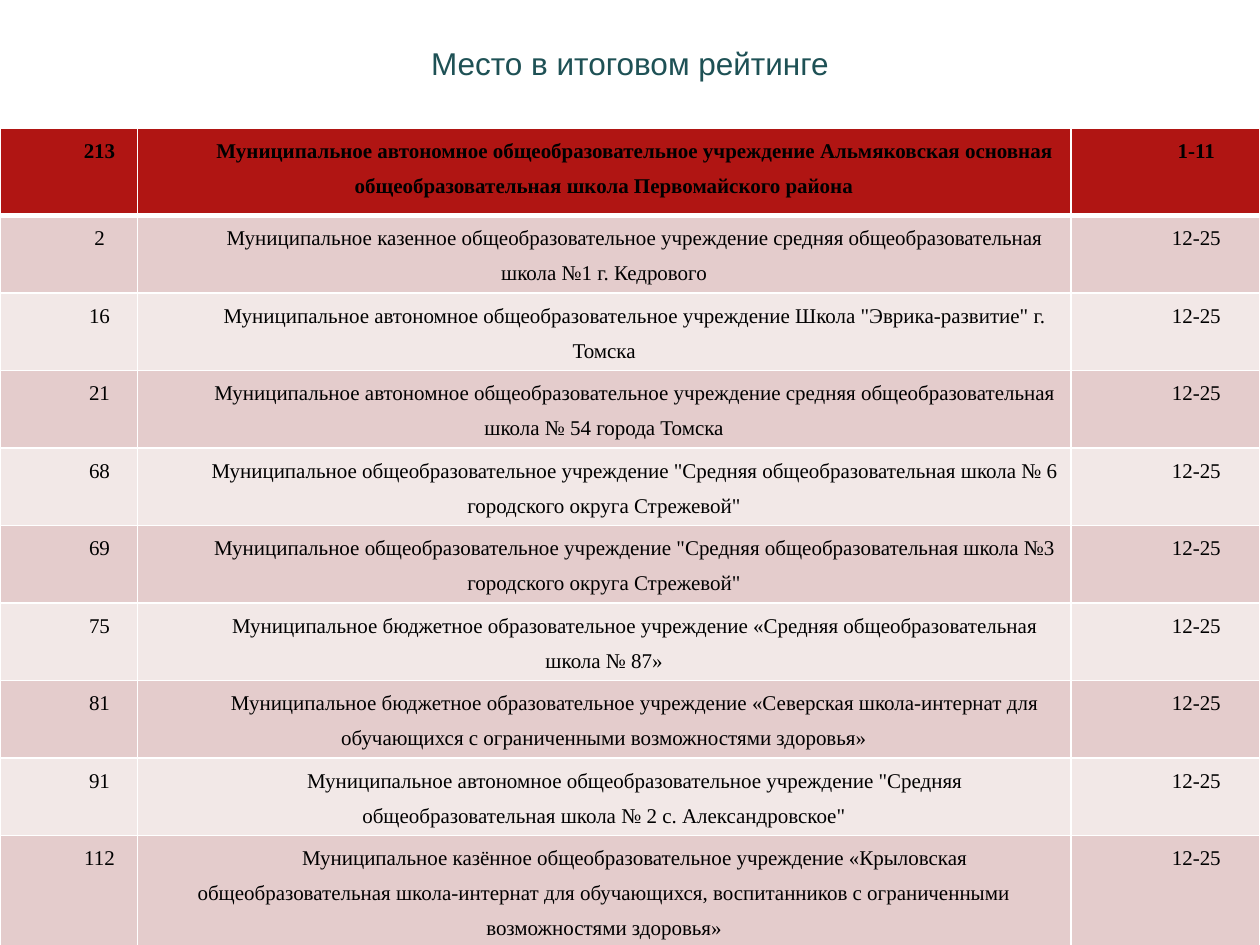
from lxml.etree import SubElement
from pptx import Presentation
from pptx.dml.color import RGBColor
from pptx.enum.text import MSO_ANCHOR, PP_ALIGN
from pptx.oxml.ns import qn
from pptx.util import Inches, Pt

HEAD, DARK, PALE = "B01513", "E4CCCC", "F2E8E7"
WIDTHS = [1.09, 7.41, 1.5]
HEAD_H, LAST_H, FULL_H = 0.69, 1.03, 6.64
ROWS = [
    ("213", "Муниципальное автономное общеобразовательное учреждение Альмяковская основная общеобразовательная школа Первомайского района", "1-11"),
    ("2", "Муниципальное казенное общеобразовательное учреждение средняя общеобразовательная школа №1 г. Кедрового", "12-25"),
    ("16", 'Муниципальное автономное общеобразовательное учреждение Школа "Эврика-развитие" г. Томска', "12-25"),
    ("21", "Муниципальное автономное общеобразовательное учреждение средняя общеобразовательная школа № 54 города Томска", "12-25"),
    ("68", 'Муниципальное общеобразовательное учреждение "Средняя общеобразовательная школа № 6 городского округа Стрежевой"', "12-25"),
    ("69", 'Муниципальное общеобразовательное учреждение "Средняя общеобразовательная школа №3 городского округа Стрежевой"', "12-25"),
    ("75", "Муниципальное бюджетное образовательное учреждение «Средняя общеобразовательная школа № 87»", "12-25"),
    ("81", "Муниципальное бюджетное образовательное учреждение «Северская школа-интернат для обучающихся с ограниченными возможностями здоровья»", "12-25"),
    ("91", 'Муниципальное автономное общеобразовательное учреждение "Средняя общеобразовательная школа № 2 с. Александровское"', "12-25"),
    ("112", "Муниципальное казённое общеобразовательное учреждение «Крыловская общеобразовательная школа-интернат для обучающихся, воспитанников c ограниченными возможностями здоровья»", "12-25"),
]


def color(code):
    return RGBColor.from_string(code)


def write(frame, text, font="Times New Roman", size=12, ink="000000",
          bold=False, indent=0, spacing=1):
    frame.word_wrap = True
    para = frame.paragraphs[0]
    para.alignment = PP_ALIGN.CENTER
    para.line_spacing = spacing
    if indent:
        props = para._p.get_or_add_pPr()
        props.set("marL", "0")
        props.set("indent", str(Inches(indent)))
    run = para.add_run()
    run.text = text
    run.font.name = font
    run.font.size = Pt(size)
    run.font.bold = bold
    run.font.color.rgb = color(ink)


def add_title(slide, text):
    box = slide.shapes.add_textbox(Inches(0.5), Inches(0.3), Inches(9), Inches(1.25))
    box.text_frame.vertical_anchor = MSO_ANCHOR.TOP
    write(box.text_frame, text, font="Arial", size=18, ink="1E5155")


def add_edges(cell, **points):
    """Draw white borders; keys are the border tags, values their widths."""
    props = cell._tc.get_or_add_tcPr()
    for tag, width in points.items():
        line = SubElement(props, qn(f"a:{tag}"), w=str(Pt(width)))
        fill = SubElement(line, qn("a:solidFill"))
        SubElement(fill, qn("a:srgbClr"), val="FFFFFF")


def fill_cell(cell, text, row):
    head = row == 0
    cell.margin_left = cell.margin_right = Inches(0.07)
    cell.margin_top = cell.margin_bottom = 0
    # Borders must come before the fill in the cell's XML.
    add_edges(cell, lnL=1, lnR=1, lnT=3 if row == 1 else 1, lnB=3 if head else 1)
    cell.fill.solid()
    cell.fill.fore_color.rgb = color(HEAD if head else DARK if row % 2 else PALE)
    write(cell.text_frame, text, bold=head, indent=0.49, spacing=1.5)


def add_ranks(slide):
    table = slide.shapes.add_table(len(ROWS), len(WIDTHS), 0, Inches(1.02),
                                   Inches(10), Inches(FULL_H)).table
    for col, width in zip(table.columns, WIDTHS):
        col.width = Inches(width)
    mid = len(ROWS) - 2
    heights = [HEAD_H] + [(FULL_H - HEAD_H - LAST_H) / mid] * mid + [LAST_H]
    for row, (texts, height) in enumerate(zip(ROWS, heights)):
        table.rows[row].height = Inches(height)
        for col, text in enumerate(texts):
            fill_cell(table.cell(row, col), text, row)


def main():
    deck = Presentation()
    deck.slide_width, deck.slide_height = Inches(10), Inches(7.5)
    slide = deck.slides.add_slide(deck.slide_layouts[6])
    add_title(slide, "Место в итоговом рейтинге")
    add_ranks(slide)
    deck.save("out.pptx")


if __name__ == "__main__":
    main()
